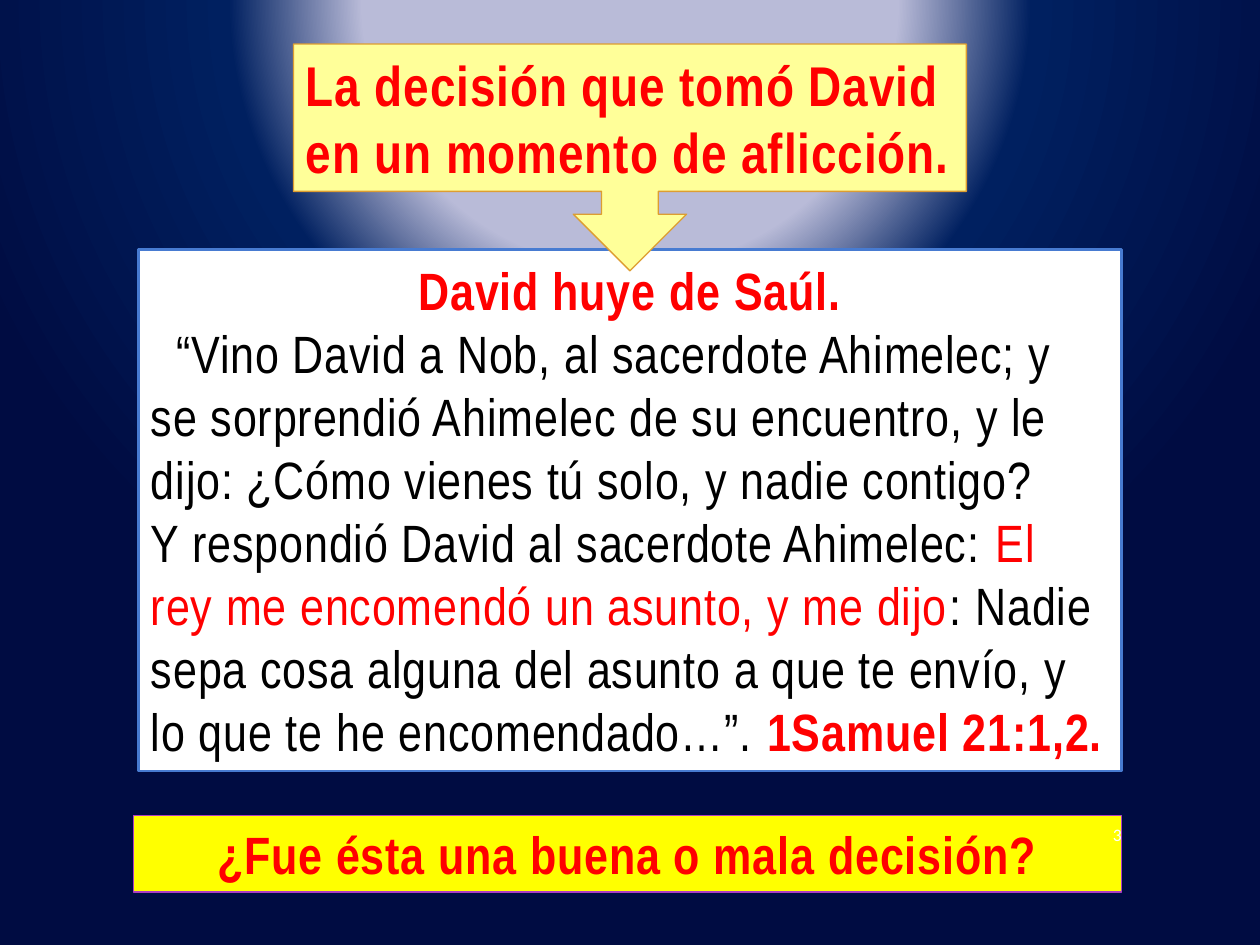
import pptx
import pptx.dml.color
import pptx.enum.shapes
import pptx.enum.text
import pptx.oxml
import pptx.oxml.ns
import pptx.util
from lxml import etree
from pptx.util import Inches

SHAPE = pptx.enum.shapes.MSO_SHAPE
ALIGN = pptx.enum.text.PP_ALIGN
RED, BLACK, WHITE = "FF0000", "000000", "FFFFFF"
A_NS = pptx.oxml.ns.nsdecls("a")


def rgb(hex_color):
    return pptx.dml.color.RGBColor.from_string(hex_color)


def set_background(slide, stops):
    """Fill the background with a circular gradient centred above the slide."""
    fill = slide.background.fill
    fill.solid()
    colors = "".join(
        f'<a:gs pos="{percent * 1000}"><a:srgbClr val="{color}"/></a:gs>'
        for percent, color in stops)
    gradient = pptx.oxml.parse_xml(
        f'<a:gradFill {A_NS} rotWithShape="1"><a:gsLst>{colors}</a:gsLst>'
        '<a:path path="circle"><a:fillToRect l="50000" t="-80000" '
        'r="50000" b="180000"/></a:path></a:gradFill>')
    solid = slide.background._cSld.find(".//" + pptx.oxml.ns.qn("a:solidFill"))
    solid.getparent().replace(solid, gradient)


def add_box(slide, kind, left, top, width, height, fill, line, line_width):
    sp = slide.shapes.add_shape(
        kind, Inches(left), Inches(top), Inches(width), Inches(height))
    sp.shadow.inherit = False
    sp.fill.solid()
    sp.fill.fore_color.rgb = rgb(fill)
    sp.line.color.rgb = rgb(line)
    sp.line.width = pptx.util.Pt(line_width)
    tf = sp.text_frame
    tf.word_wrap = True
    tf.vertical_anchor = pptx.enum.text.MSO_ANCHOR.MIDDLE
    return tf


def add_paragraph(tf, align=ALIGN.LEFT, indent=0):
    p = tf.paragraphs[0]
    if p.runs:
        p = tf.add_paragraph()
    p.alignment = align
    if indent:
        p._p.get_or_add_pPr().set("indent", str(Inches(indent)))
    return p


def add_run(p, text, size, color, bold=False, font="Arial Narrow"):
    r = p.add_run()
    r.text = text
    r.font.name = font
    r.font.size = pptx.util.Pt(size)
    r.font.bold = bold
    r.font.color.rgb = rgb(color)
    return r


def add_outlined_run(p, text, size, color, bold=False, outline=1.5):
    """Add a slightly spaced run whose letters are outlined in their colour."""
    r = add_run(p, text, size, color, bold)
    props = r.font._element
    props.set("spc", "50")
    props.insert(0, etree.fromstring(
        f'<a:ln {A_NS} w="{pptx.util.Pt(outline)}"><a:solidFill>'
        f'<a:srgbClr val="{color}"/></a:solidFill></a:ln>'))


def add_passage(slide):
    tf = add_box(slide, SHAPE.RECTANGLE, 1.1, 1.98, 7.8, 4.14,
                 WHITE, "477BD1", 1.5)
    p = add_paragraph(tf, ALIGN.CENTER)
    add_outlined_run(p, "David huye de Saúl.", 30, RED, True, 0.75)
    p = add_paragraph(tf, indent=0.2)
    add_outlined_run(
        p, "“Vino David a Nob, al sacerdote Ahimelec; y se sorprendió Ahimelec "
        "de su encuentro, y le dijo: ¿Cómo vienes tú solo, y nadie contigo?",
        30, BLACK)
    p = add_paragraph(tf)
    add_outlined_run(p, "Y respondió David al sacerdote Ahimelec: ", 30, BLACK)
    add_outlined_run(p, "El rey me encomendó un asunto, y me dijo", 30, RED)
    add_outlined_run(
        p, ": Nadie sepa cosa alguna del asunto a que te envío, "
        "y lo que te he encomendado…”. ", 30, BLACK)
    add_outlined_run(p, "1Samuel 21:1,2.", 30, RED, True, 0.75)


def add_question(slide):
    tf = add_box(slide, SHAPE.RECTANGLE, 1.06, 6.47, 7.84, 0.61,
                 "FFFF00", "AC3EC1", 0.75)
    p = add_paragraph(tf, ALIGN.CENTER)
    add_outlined_run(p, "¿Fue ésta una buena o mala decisión?", 30, RED, True)


def add_heading(slide):
    tf = add_box(slide, SHAPE.DOWN_ARROW_CALLOUT, 2.33, 0.35, 5.34, 1.8,
                 "FFFF99", "DD9D31", 0.75)
    p = add_paragraph(tf)
    add_outlined_run(
        p, "La decisión que tomó David en un momento de aflicción.",
        32, RED, True)


def add_page_number(slide, number):
    tf = slide.shapes.add_textbox(
        Inches(8.54), Inches(6.42), Inches(0.46), Inches(0.41)).text_frame
    tf.word_wrap = True
    tf.vertical_anchor = pptx.enum.text.MSO_ANCHOR.MIDDLE
    add_run(add_paragraph(tf, ALIGN.RIGHT), number, 10, WHITE, font="Calibri")


def main():
    prs = pptx.Presentation()
    prs.slide_width, prs.slide_height = Inches(10), Inches(7.5)
    s = prs.slides.add_slide(prs.slide_layouts[6])
    set_background(s, [(34, "B9BBD8"), (51, "002060"), (91, "000C42")])
    add_passage(s)
    add_question(s)
    add_heading(s)
    add_page_number(s, "3")
    prs.save("out.pptx")


if __name__ == "__main__":
    main()
